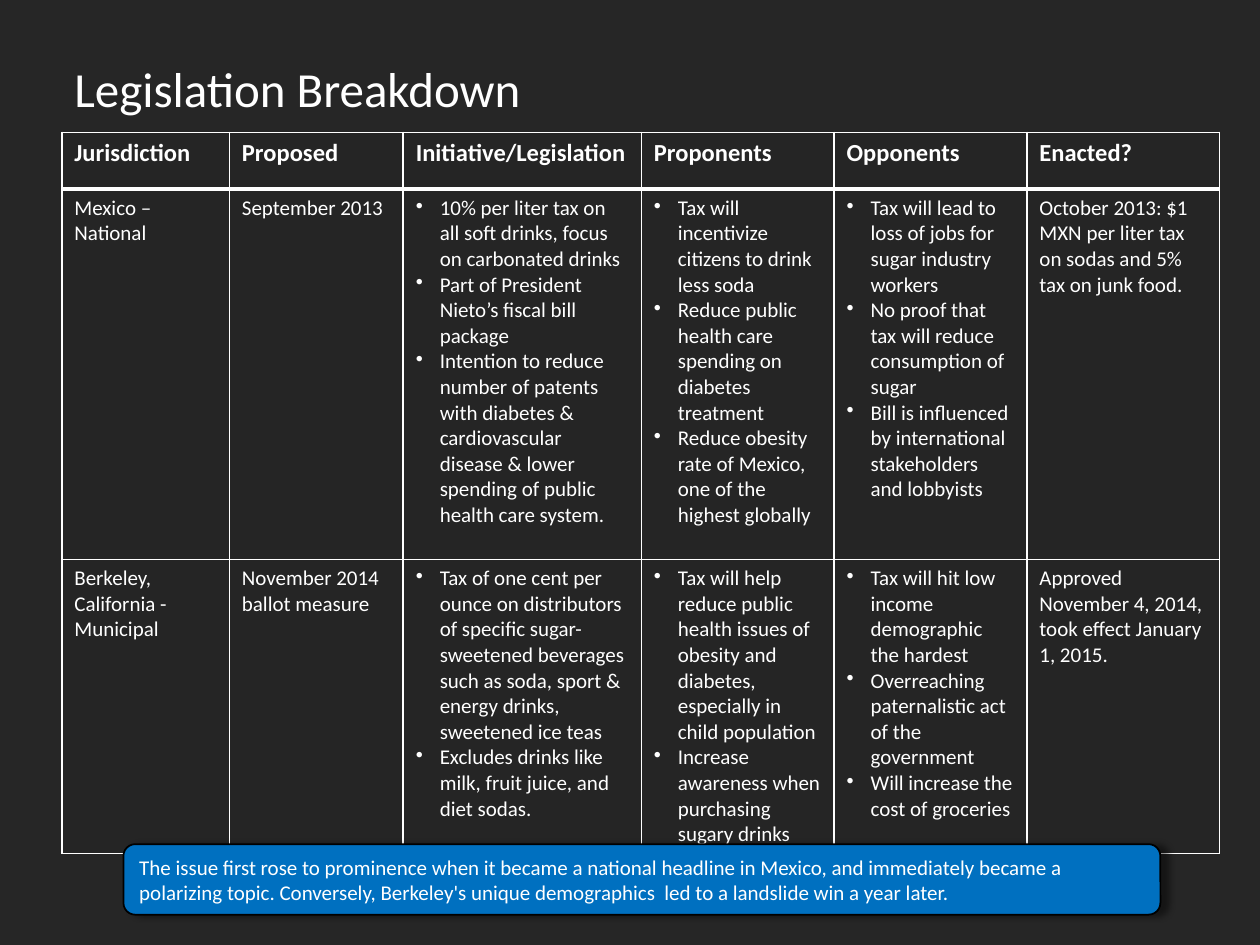
"""Build the Legislation Breakdown slide with its comparison table and takeaway."""
import lxml.etree
import pptx
import pptx.dml.color
import pptx.enum.shapes
import pptx.enum.text
import pptx.oxml
import pptx.oxml.ns
import pptx.util

Inches = pptx.util.Inches
Pt = pptx.util.Pt
RGBColor = pptx.dml.color.RGBColor
qn = pptx.oxml.ns.qn

WHITE = RGBColor(0xFF, 0xFF, 0xFF)
BLACK = RGBColor(0x00, 0x00, 0x00)
BACKGROUND = RGBColor(0x26, 0x26, 0x26)
CELL_FILL = RGBColor(0x25, 0x25, 0x25)
BLUE = RGBColor(0x00, 0x70, 0xC0)

TITLE_FONT = {"name": "Calibri", "size": Pt(28), "bold": False}
HEADER_FONT = {"name": "Calibri", "size": Pt(14), "bold": True}
BODY_FONT = {"name": "Calibri", "size": Pt(12), "bold": False}

COLUMN_WIDTHS = [1.33, 1.38, 1.89, 1.53, 1.53, 1.53]
ROW_HEIGHTS = [0.45, 2.94, 2.3]
BULLET_INDENT = Inches(0.19)

HEADERS = ["Jurisdiction", "Proposed", "Initiative/Legislation",
           "Proponents", "Opponents", "Enacted?"]
MEXICO = [
    "Mexico – National",
    "September 2013",
    ["10% per liter tax on all soft drinks, focus on carbonated drinks",
     "Part of President Nieto’s fiscal bill package",
     "Intention to reduce number of patents with diabetes & cardiovascular "
     "disease & lower spending of public health care system."],
    ["Tax will incentivize citizens to drink less soda",
     "Reduce public health care spending on diabetes treatment",
     "Reduce obesity rate of Mexico, one of the highest globally"],
    ["Tax will lead to loss of jobs for sugar industry workers",
     "No proof that tax will reduce consumption of sugar",
     "Bill is influenced by international stakeholders and lobbyists"],
    "October 2013: $1 MXN per liter tax on sodas and 5% tax on junk food.",
]
BERKELEY = [
    "Berkeley, California - Municipal",
    "November 2014 ballot measure",
    ["Tax of one cent per ounce on distributors of specific sugar-sweetened "
     "beverages such as soda, sport & energy drinks, sweetened ice teas",
     "Excludes drinks like milk, fruit juice, and diet sodas."],
    ["Tax will help reduce public health issues of obesity and diabetes, "
     "especially in child population",
     "Increase awareness when purchasing sugary drinks"],
    ["Tax will hit low income demographic the hardest",
     "Overreaching paternalistic act of the government",
     "Will increase the cost of groceries"],
    "Approved November 4, 2014, took effect January 1, 2015.",
]
TAKEAWAY = ("The issue first rose to prominence when it became a national headline "
            "in Mexico, and immediately became a polarizing topic. Conversely, "
            "Berkeley's unique demographics  led to a landslide win a year later.")


def write_paragraph(paragraph, text, font_format):
    """Write one left-aligned white run in the given format."""
    paragraph.alignment = pptx.enum.text.PP_ALIGN.LEFT
    run = paragraph.add_run()
    run.text = text
    for attribute, value in font_format.items():
        setattr(run.font, attribute, value)
    run.font.color.rgb = WHITE


def add_bullet(paragraph):
    """Give a paragraph a round bullet with a hanging indent."""
    properties = paragraph._p.get_or_add_pPr()
    properties.set("marL", str(BULLET_INDENT))
    properties.set("indent", str(-BULLET_INDENT))
    bullet = lxml.etree.SubElement(properties, qn("a:buChar"))
    bullet.set("char", "•")


def set_borders(cell, widths):
    """Draw white cell borders from a dict of side letter to points."""
    properties = cell._tc.get_or_add_tcPr()
    for position, (side, width) in enumerate(widths.items()):
        border = pptx.oxml.parse_xml(
            f'<a:ln{side} xmlns:a="{pptx.oxml.ns.nsdecls("a").split(chr(34))[1]}" '
            f'w="{Pt(width)}"><a:solidFill><a:srgbClr val="{WHITE}"/>'
            f'</a:solidFill></a:ln{side}>')
        properties.insert(position, border)


def fill_cell(cell, content, font_format):
    """Fill a cell with plain text, or with bullets when given a list."""
    cell.fill.solid()
    cell.fill.fore_color.rgb = CELL_FILL
    bulleted = isinstance(content, list)
    for index, text in enumerate(content if bulleted else [content]):
        frame = cell.text_frame
        paragraph = frame.add_paragraph() if index else frame.paragraphs[0]
        write_paragraph(paragraph, text, font_format)
        if bulleted:
            add_bullet(paragraph)


def add_title(slide, text):
    """Place and format the title placeholder."""
    title = slide.shapes.title
    box = {"left": 0.49, "top": 0.4, "width": 8.62, "height": 0.65}
    for attribute, value in box.items():
        setattr(title, attribute, Inches(value))
    title.text_frame.vertical_anchor = pptx.enum.text.MSO_ANCHOR.MIDDLE
    paragraph = title.text_frame.paragraphs[0]
    paragraph.line_spacing = 0.9
    write_paragraph(paragraph, text, TITLE_FONT)


def add_legislation_table(slide, rows):
    """Add the comparison table with a heavier rule below its header."""
    table = slide.shapes.add_table(
        len(rows), len(COLUMN_WIDTHS), Inches(0.49), Inches(1.05),
        Inches(sum(COLUMN_WIDTHS)), Inches(sum(ROW_HEIGHTS))).table
    for column, width in zip(table.columns, COLUMN_WIDTHS):
        column.width = Inches(width)
    for row_index, contents in enumerate(rows):
        table.rows[row_index].height = Inches(ROW_HEIGHTS[row_index])
        font_format = BODY_FONT if row_index else HEADER_FONT
        borders = {"L": 1, "R": 1, "T": 3 if row_index == 1 else 1,
                   "B": 1 if row_index else 3}
        for column_index, content in enumerate(contents):
            cell = table.cell(row_index, column_index)
            fill_cell(cell, content, font_format)
            set_borders(cell, borders)


def add_shadow(shape):
    """Cast a soft black shadow to the right of a shape."""
    shape.shadow.inherit = False
    effects = shape._element.spPr.find(qn("a:effectLst"))
    shadow = lxml.etree.SubElement(effects, qn("a:outerShdw"))
    settings = {"blurRad": Pt(4), "dist": Pt(4), "dir": 0, "algn": "l", "rotWithShape": 0}
    for attribute, value in settings.items():
        shadow.set(attribute, str(value))
    color = lxml.etree.SubElement(shadow, qn("a:srgbClr"), val=str(BLACK))
    lxml.etree.SubElement(color, qn("a:alpha"), val="43000")


def add_takeaway(slide, text):
    """Add the rounded blue takeaway bar."""
    takeaway = slide.shapes.add_shape(
        pptx.enum.shapes.MSO_SHAPE.ROUNDED_RECTANGLE,
        Inches(0.98), Inches(6.7), Inches(8.23), Inches(0.56))
    takeaway.fill.solid()
    takeaway.fill.fore_color.rgb = BLUE
    takeaway.line.color.rgb = BLACK
    takeaway.line.width = Pt(1)
    add_shadow(takeaway)
    takeaway.text_frame.word_wrap = True
    write_paragraph(takeaway.text_frame.paragraphs[0], text, BODY_FONT)


def main():
    """Build and save the slide."""
    presentation = pptx.Presentation()
    presentation.slide_width = Inches(10)
    presentation.slide_height = Inches(7.5)
    slide = presentation.slides.add_slide(presentation.slide_layouts[5])
    slide.background.fill.solid()
    slide.background.fill.fore_color.rgb = BACKGROUND
    add_title(slide, "Legislation Breakdown")
    add_legislation_table(slide, [HEADERS, MEXICO, BERKELEY])
    add_takeaway(slide, TAKEAWAY)
    presentation.save("out.pptx")


if __name__ == "__main__":
    main()
